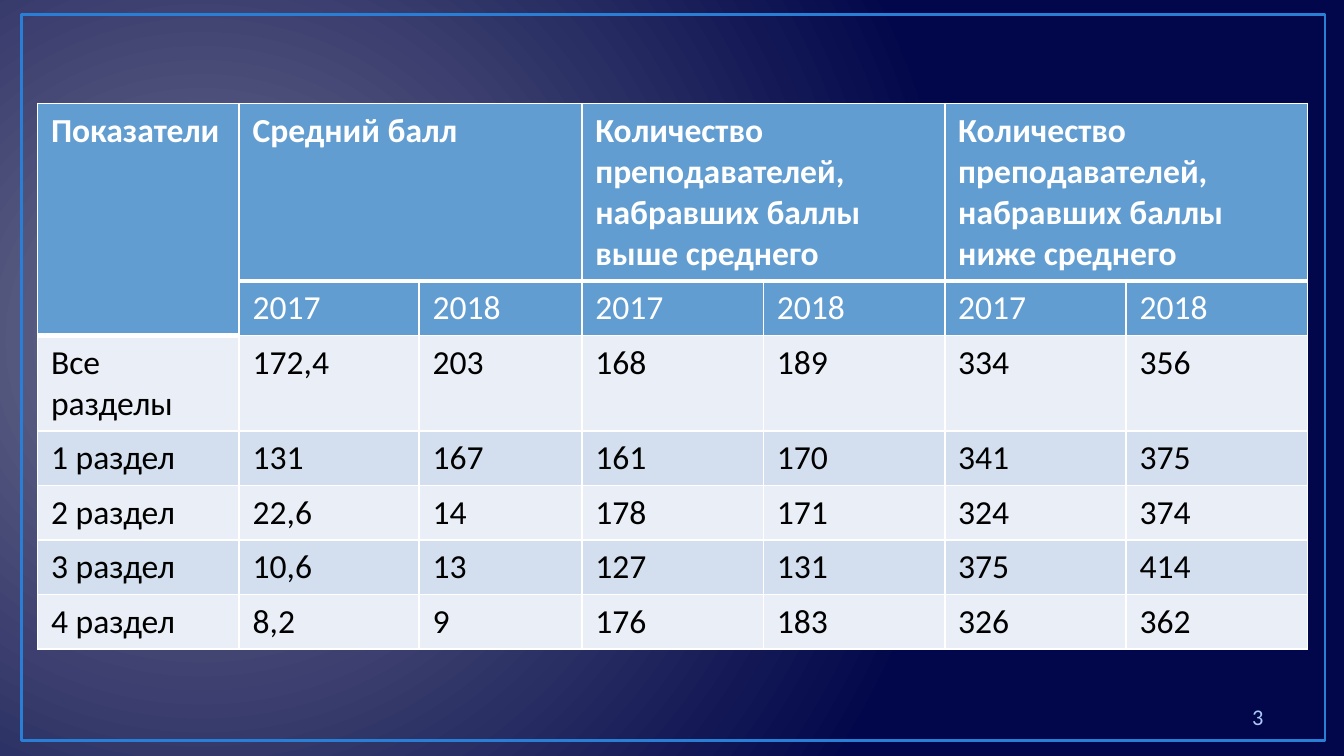
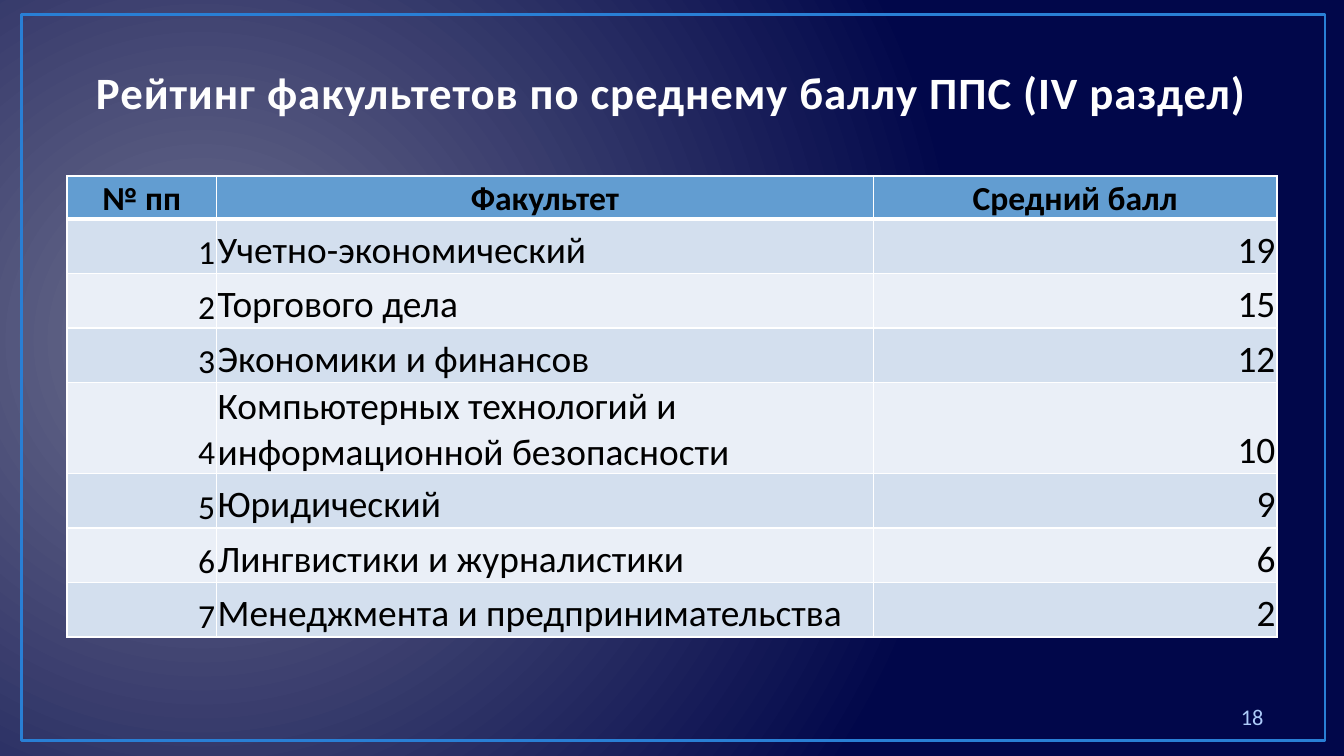
from dataclasses import dataclass
from typing import NamedTuple, Optional

from lxml import etree
from pptx import Presentation
from pptx.dml.color import RGBColor
from pptx.enum.shapes import MSO_SHAPE
from pptx.enum.text import MSO_ANCHOR, PP_ALIGN
from pptx.oxml.ns import qn
from pptx.util import Inches, Pt

RECTANGLE = MSO_SHAPE.RECTANGLE
TOP, MIDDLE, BOTTOM = MSO_ANCHOR.TOP, MSO_ANCHOR.MIDDLE, MSO_ANCHOR.BOTTOM
LEFT, CENTER, RIGHT = PP_ALIGN.LEFT, PP_ALIGN.CENTER, PP_ALIGN.RIGHT

# A 16:9 page; seven table rows share 2.84 inches
PAGE_WIDTH = Inches(10)
PAGE_HEIGHT = PAGE_WIDTH * 9 // 16
ROW_HEIGHT = Inches(2.84) // 7


@dataclass(frozen=True)
class Theme:
    font: str = "Calibri"
    glow: str = "6E708E"
    night: str = "01074A"
    frame: str = "297FD5"
    title: str = "FEFEFE"
    title_outline: str = "234F77"
    page_number: str = "ACCBF9"
    header: str = "629DD1"
    bands: tuple[str, str] = ("EAEFF7", "D3DFEE")
    white: str = "FFFFFF"
    black: str = "000000"
    title_size: float = 24
    body_size: float = 18
    large_size: float = 20
    number_size: float = 12
    thin: float = 1
    thick: float = 3


THEME = Theme()


class Area(NamedTuple):
    left: float
    top: float
    width: float
    height: float

    def lengths(self) -> list[int]:
        return [Inches(value) for value in self]


class Margins(NamedTuple):
    left: float = 0.1
    top: float = 0.05
    right: float = 0.1
    bottom: float = 0.05


class Column(NamedTuple):
    width: float
    size: float = THEME.body_size
    align: PP_ALIGN = LEFT
    rule_row: int = 0  # the thick rule runs below this row


class Merge(NamedTuple):
    first: tuple[int, int]
    last: tuple[int, int]


@dataclass(frozen=True)
class TableSpec:
    area: Area
    columns: list[Column]
    rows: list[list[Optional[str]]]
    header_color: str
    header_rows: int = 1
    header_height: int = ROW_HEIGHT
    header_align: PP_ALIGN = LEFT
    anchor: MSO_ANCHOR = TOP
    margins: Margins = Margins()
    merges: tuple[Merge, ...] = ()


@dataclass(frozen=True)
class PageSpec:
    number: str
    table: TableSpec
    title: str = ""


# Content
SCORES = TableSpec(
    area=Area(0.28, 0.77, 9.45, 4.03),
    columns=[Column(1.5, rule_row=1), Column(1.34), Column(1.21)]
    + [Column(1.35)] * 4,
    rows=[
        ["Показатели", "Средний балл", None,
         "Количество преподавателей, набравших баллы выше среднего", None,
         "Количество преподавателей, набравших баллы ниже среднего", None],
        [None] + ["2017", "2018"] * 3,
        ["Все разделы", "172,4", "203", "168", "189", "334", "356"],
        ["1 раздел", "131", "167", "161", "170", "341", "375"],
        ["2 раздел", "22,6", "14", "178", "171", "324", "374"],
        ["3 раздел", "10,6", "13", "127", "131", "375", "414"],
        ["4 раздел", "8,2", "9", "176", "183", "326", "362"],
    ],
    header_color=THEME.white,
    header_rows=2,
    merges=(Merge((0, 0), (1, 0)),)
    + tuple(Merge((0, start), (0, start + 1)) for start in (1, 3, 5)),
)

FACULTIES = [
    ("Учетно-экономический", "19"),
    ("Торгового дела", "15"),
    ("Экономики и финансов", "12"),
    ("Компьютерных технологий и информационной безопасности", "10"),
    ("Юридический", "9"),
    ("Лингвистики и журналистики", "6"),
    ("Менеджмента и предпринимательства", "2"),
]

RATING = TableSpec(
    area=Area(0.5, 1.31, 9, 3.43),
    columns=[
        Column(1.11, align=RIGHT),
        Column(4.89, THEME.large_size),
        Column(3, THEME.large_size, RIGHT),
    ],
    rows=[["№ пп", "Факультет", "Средний балл"]]
    + [[str(place), *faculty] for place, faculty in enumerate(FACULTIES, 1)],
    header_color=THEME.black,
    header_height=Inches(0.32),
    header_align=CENTER,
    anchor=BOTTOM,
    margins=Margins(0.01, 0.01, 0.01, 0),
)

PAGES = [
    PageSpec("3", SCORES),
    PageSpec("18", RATING, "Рейтинг факультетов по среднему баллу ППС (IV раздел)"),
]


# Text
def add_span(para, text: str, size: float, color: str, bold: bool = False):
    span = para.add_run()
    span.text = text
    span.font.name = THEME.font
    span.font.size = Pt(size)
    span.font.bold = bold
    span.font.color.rgb = RGBColor.from_string(color)
    return span


def set_margins(target, margins: Margins) -> None:
    target.margin_left = Inches(margins.left)
    target.margin_top = Inches(margins.top)
    target.margin_right = Inches(margins.right)
    target.margin_bottom = Inches(margins.bottom)


def add_box(page, area: Area, anchor: MSO_ANCHOR, align: PP_ALIGN, margins: Margins):
    frame = page.shapes.add_textbox(*area.lengths()).text_frame
    frame.word_wrap = True
    frame.vertical_anchor = anchor
    set_margins(frame, margins)
    para = frame.paragraphs[0]
    para.alignment = align
    return para


def make_line(tag: str, width: float, color: str):
    line = etree.Element(qn(tag), w=str(Pt(width)))
    fill = etree.SubElement(line, qn("a:solidFill"))
    etree.SubElement(fill, qn("a:srgbClr"), val=color)
    return line


def add_title(page, text: str) -> None:
    para = add_box(page, Area(0.5, 0.45, 8.99, 0.47), BOTTOM, CENTER,
                   Margins(top=0, bottom=0.04))
    span = add_span(para, text, THEME.title_size, THEME.title, bold=True)
    properties = span.font._element
    properties.set("spc", "50")
    properties.insert(0, make_line("a:ln", 1.05, THEME.title_outline))


# Background and frame
def set_background(master) -> None:
    master.background.fill.gradient()
    gradient = master.element.find(".//" + qn("p:bgPr") + "/" + qn("a:gradFill"))
    for child in list(gradient):
        gradient.remove(child)
    stops = etree.SubElement(gradient, qn("a:gsLst"))
    for position, color in ((0, THEME.glow), (100000, THEME.night)):
        stop = etree.SubElement(stops, qn("a:gs"), pos=str(position))
        etree.SubElement(stop, qn("a:srgbClr"), val=color)
    shade = etree.SubElement(gradient, qn("a:path"), {"path": "circle"})
    etree.SubElement(shade, qn("a:fillToRect"), l="15000", t="50000", r="85000", b="60000")


def add_frame(page) -> None:
    frame = page.shapes.add_shape(RECTANGLE, *Area(0.16, 0.11, 9.7, 5.4).lengths())
    frame.shadow.inherit = False
    frame.fill.background()
    frame.line.color.rgb = RGBColor.from_string(THEME.frame)
    frame.line.width = Pt(1.5)


# Tables
def set_borders(cell, row: int, rule_row: int) -> None:
    last_row = row + cell.span_height - 1
    widths = {
        "a:lnL": THEME.thin,
        "a:lnR": THEME.thin,
        "a:lnT": THEME.thick if row - 1 == rule_row else THEME.thin,
        "a:lnB": THEME.thick if last_row == rule_row else THEME.thin,
    }
    properties = cell._tc.get_or_add_tcPr()
    for tag, width in widths.items():
        properties.append(make_line(tag, width, THEME.white))


def fill_cell(cell, text: Optional[str], row: int, column: Column, spec: TableSpec) -> None:
    is_header = row < spec.header_rows
    set_borders(cell, row, column.rule_row)
    cell.fill.solid()
    cell.fill.fore_color.rgb = RGBColor.from_string(
        THEME.header if is_header else THEME.bands[row % 2])
    cell.vertical_anchor = spec.anchor
    set_margins(cell, spec.margins)
    if text is None:
        return
    para = cell.text_frame.paragraphs[0]
    para.alignment = spec.header_align if is_header else column.align
    add_span(para, text,
             THEME.body_size if is_header else column.size,
             spec.header_color if is_header else THEME.black,
             bold=row == 0)


def add_table(page, spec: TableSpec) -> None:
    holder = page.shapes.add_table(
        len(spec.rows), len(spec.columns), *spec.area.lengths())
    table = holder.table
    table.first_row = table.horz_banding = False
    for merge in spec.merges:
        table.cell(*merge.first).merge(table.cell(*merge.last))
    for index, column in enumerate(spec.columns):
        table.columns[index].width = Inches(column.width)
    for row, texts in enumerate(spec.rows):
        table.rows[row].height = spec.header_height if row == 0 else ROW_HEIGHT
        for index, text in enumerate(texts):
            fill_cell(table.cell(row, index), text, row, spec.columns[index], spec)
    holder.height = Inches(spec.area.height)


def add_page(deck, spec: PageSpec) -> None:
    page = deck.slides.add_slide(deck.slide_layouts[6])
    add_frame(page)
    if spec.title:
        add_title(page, spec.title)
    add_table(page, spec.table)
    para = add_box(page, Area(7.17, 5.18, 2.33, 0.3), MIDDLE, RIGHT, Margins())
    add_span(para, spec.number, THEME.number_size, THEME.page_number)


def main() -> None:
    deck = Presentation()
    deck.slide_width, deck.slide_height = PAGE_WIDTH, PAGE_HEIGHT
    set_background(deck.slide_master)
    for spec in PAGES:
        add_page(deck, spec)
    deck.save("out.pptx")


if __name__ == "__main__":
    main()
